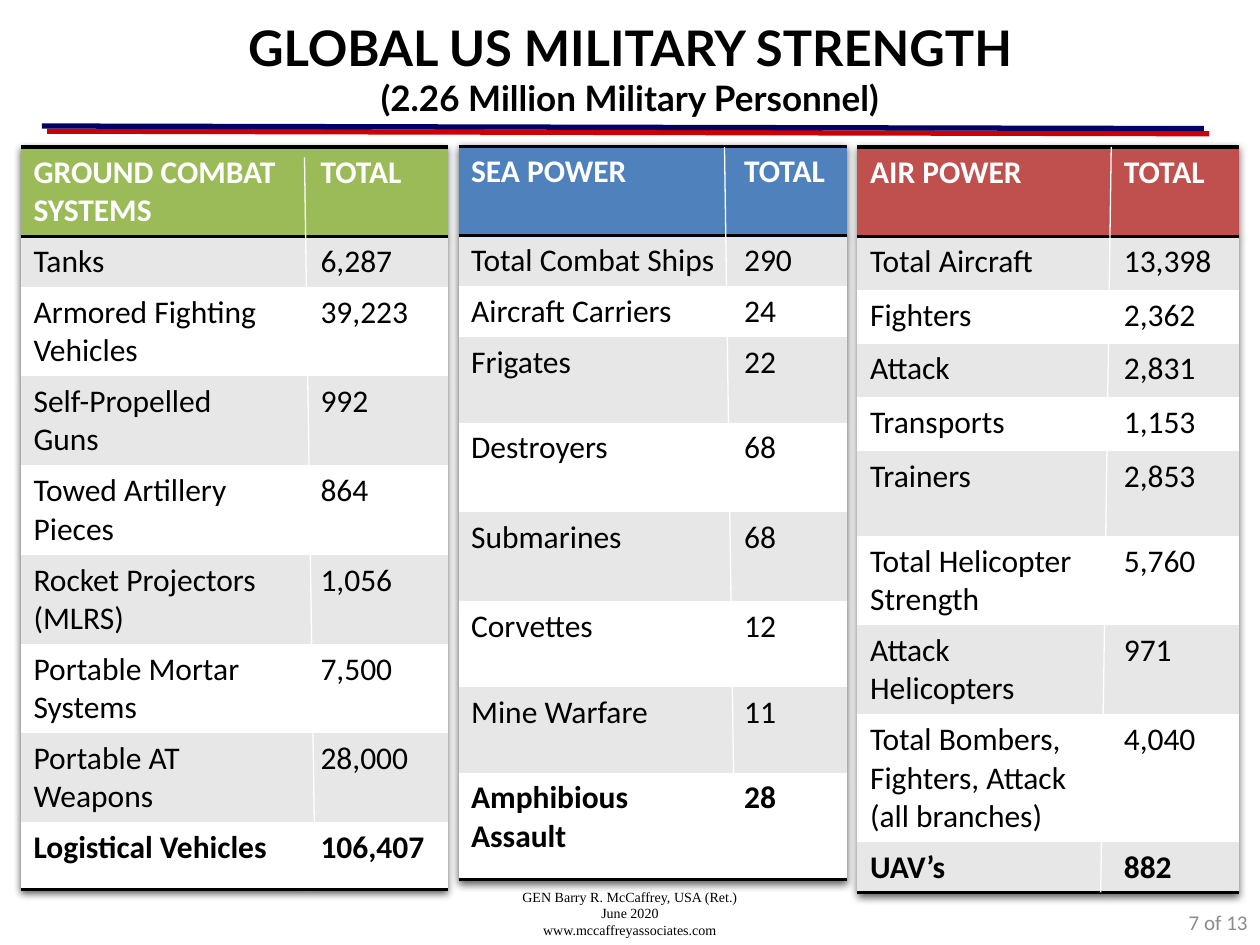
import dataclasses
import pptx
import pptx.dml.color
import pptx.enum.shapes
import pptx.enum.text
import pptx.oxml
import pptx.oxml.ns
import pptx.util

Pt = pptx.util.Pt
Align = pptx.enum.text.PP_ALIGN
Anchor = pptx.enum.text.MSO_ANCHOR


@dataclasses.dataclass(frozen=True)
class Theme:
    head: str = "Lato"
    body: str = "Calibri"
    foot: str = "Times New Roman"
    ink: str = "000000"
    paper: str = "FFFFFF"
    band: str = "E7E7E7"
    mute: str = "8C8C8C"
    navy: str = "000066"
    red: str = "CC0000"
    ground: str = "9BBB59"
    sea: str = "4F81BD"
    air: str = "C0504D"
    title: float = 28
    sub: float = 20
    cell: float = 18
    page: float = 12
    note: float = 8


T = Theme()
NS = pptx.oxml.ns.nsdecls("a")
PLAIN = "{2D5ABB26-0587-4C30-8999-92F81FD0307C}"  # style without grid or fill

# Rows: name, total, height in points
GROUND = [
    ("GROUND COMBAT SYSTEMS", "TOTAL", 51),
    ("Tanks", "6,287", 29),
    ("Armored Fighting Vehicles", "39,223", 51),
    ("Self-Propelled\nGuns", "992", 51),
    ("Towed Artillery Pieces", "864", 51),
    ("Rocket Projectors (MLRS)", "1,056", 51),
    ("Portable Mortar Systems", "7,500", 51),
    ("Portable AT Weapons", "28,000", 51),
    ("Logistical Vehicles", "106,407", 38.5),
]
SEA = [
    ("SEA POWER", "TOTAL", 51),
    ("Total Combat Ships", "290", 29),
    ("Aircraft Carriers", "24", 29),
    ("Frigates", "22", 49),
    ("Destroyers", "68", 51),
    ("Submarines", "68", 51),
    ("Corvettes", "12", 49),
    ("Mine Warfare", "11", 49),
    ("Amphibious Assault", "28", 61),
]
AIR = [
    ("AIR POWER", "TOTAL", 51),
    ("Total Aircraft", "13,398", 30.7),
    ("Fighters", "2,362", 30.7),
    ("Attack", "2,831", 30.7),
    ("Transports", "1,153", 30.7),
    ("Trainers", "2,853", 48.5),
    ("Total Helicopter Strength", "5,760", 51),
    ("Attack Helicopters", "971", 51),
    ("Total Bombers, Fighters, Attack (all branches)", "4,040", 73),
    ("UAV’s", "882", 29),
]


def rgb(hue):
    return pptx.dml.color.RGBColor.from_string(hue)


def style(run, face, size, hue, bold=False):
    run.font.name, run.font.size, run.font.bold = face, Pt(size), bold
    run.font.color.rgb = rgb(hue)


def shade(hue, alpha, blur, dist, angle):
    """Effect list with one outer shadow."""
    return pptx.oxml.parse_xml(
        f'<a:effectLst {NS}><a:outerShdw blurRad="{Pt(blur)}" dist="{Pt(dist)}" '
        f'dir="{angle * 60000}" algn="ctr" rotWithShape="0"><a:srgbClr val="{hue}">'
        f'<a:alpha val="{alpha * 1000}"/></a:srgbClr></a:outerShdw></a:effectLst>')


def line(slide, start, end, hue, width, effect=None):
    kind = pptx.enum.shapes.MSO_CONNECTOR.STRAIGHT
    rule = slide.shapes.add_connector(kind, *map(Pt, start + end))
    rule.line.color.rgb, rule.line.width = rgb(hue), Pt(width)
    if effect is None:
        effect = pptx.oxml.parse_xml(f"<a:effectLst {NS}/>")
    rule._element.spPr.append(effect)


def border(cell, sides):
    props = cell._tc.get_or_add_tcPr()
    for spot, side in enumerate(sides):
        props.insert(spot, pptx.oxml.parse_xml(
            f'<a:ln{side} {NS} w="{Pt(2)}"><a:solidFill><a:srgbClr val="{T.ink}"/>'
            f'</a:solidFill></a:ln{side}>'))


def title(slide, box):
    """Two-line heading."""
    shape = slide.shapes.title
    shape.left, shape.top, shape.width, shape.height = map(Pt, box)
    frame = shape.text_frame
    frame.text = "GLOBAL US MILITARY STRENGTH\v(2.26 Million Military Personnel)"
    frame.auto_size = pptx.enum.text.MSO_AUTO_SIZE.NONE
    frame.vertical_anchor = Anchor.MIDDLE
    para = frame.paragraphs[0]
    para.alignment = Align.CENTER
    for run, size in zip(para.runs, (T.title, T.sub)):
        style(run, T.head, size, T.ink, True)


def note(slide, box, text, face, size, hue, align, anchor):
    """Small text at the foot of the slide."""
    frame = slide.shapes.add_textbox(*map(Pt, box)).text_frame
    frame.word_wrap, frame.vertical_anchor = True, anchor
    frame.text = text
    para = frame.paragraphs[0]
    para.alignment = align
    for run in para.runs:
        style(run, face, size, hue)


def panel(slide, left, top, cols, rows, hue, start, end):
    """Force table with a slanted divider; start and end are offsets in the box."""
    high = sum(row[2] for row in rows)
    frame = slide.shapes.add_table(
        len(rows), 2, *map(Pt, (left, top, sum(cols), high)))
    table = frame.table
    props = table._tbl.tblPr
    props.find(pptx.oxml.ns.qn("a:tableStyleId")).text = PLAIN
    props.insert(0, shade(T.ink, 63, 4.5, 1.5, 90))
    for col, wide in zip(table.columns, cols):
        col.width = Pt(wide)

    last = len(rows) - 1
    for r, (*texts, tall) in enumerate(rows):
        table.rows[r].height = Pt(tall)
        back = hue if r == 0 else T.band if r % 2 else T.paper
        for c, text in enumerate(texts):
            cell = table.cell(r, c)
            cell.text = text
            cell.fill.solid()
            cell.fill.fore_color.rgb = rgb(back)
            for para in cell.text_frame.paragraphs:
                for run in para.runs:
                    style(run, T.body, T.cell, T.ink if r else T.paper,
                          r in (0, last))
            if r in (0, last):
                border(cell, "B" if r else "TB")

    line(slide, (left + start[0], top + start[1]),
         (left + end[0], top + end[1]), T.paper, 0.75)


def main():
    deck = pptx.Presentation()
    deck.slide_width, deck.slide_height = Pt(720), Pt(540)
    slide = deck.slides.add_slide(deck.slide_layouts[5])

    # Heading and rule
    line(slide, (24, 72), (688, 73.5), T.navy, 3, shade(T.red, 100, 0, 4.2, 45))
    title(slide, (36, -6, 648, 90))

    # Footer
    note(slide, (552, 508, 168, 37.5), "7 of 13", T.body, T.page, T.mute,
         Align.RIGHT, Anchor.MIDDLE)
    note(slide, (282, 504, 156, 36),
         "GEN Barry R. McCaffrey, USA (Ret.)\vJune 2020\vwww.mccaffreyassociates.com",
         T.foot, T.note, T.ink, Align.CENTER, Anchor.TOP)

    # Force tables
    panel(slide, 12, 84, (164, 80), GROUND, T.ground, (162, 6), (168, 414))
    panel(slide, 490, 84, (145, 73), AIR, T.air, (145, 0), (139, 426))
    panel(slide, 262, 83.5, (156, 66), SEA, T.sea, (152, 0.5), (158, 414.5))

    deck.save("out.pptx")


if __name__ == "__main__":
    main()
